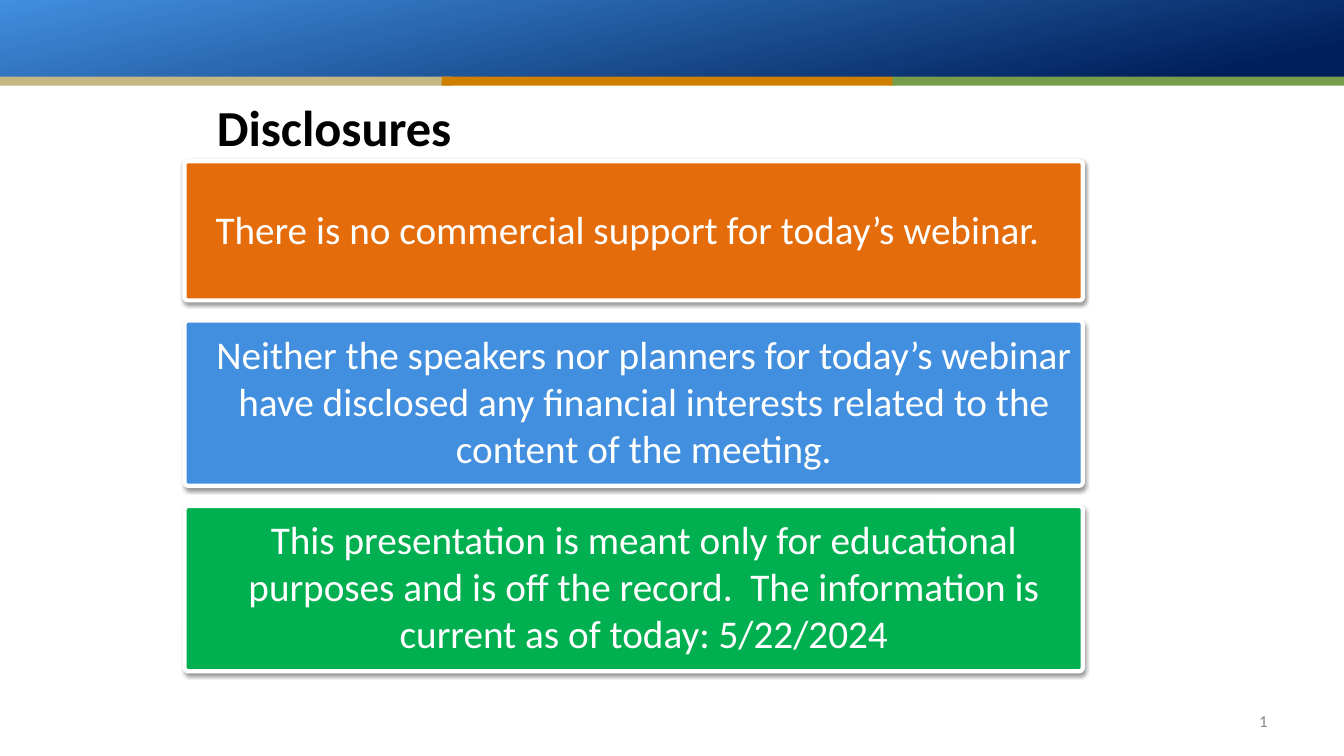
import pptx
import pptx.util
import pptx.oxml
import pptx.oxml.ns
import pptx.dml.color
import pptx.enum.shapes
import pptx.enum.text
from pptx.util import Inches

FONT = "Calibri"
COLORS = {
    "navy": "00205B", "blue": "418FDE", "sand": "C5B783", "amber": "CF7F00",
    "olive": "789D4A", "orange": "E46C0A", "green": "00B050",
    "white": "FFFFFF", "black": "000000", "gray": "898989",
}
SHAPE = pptx.enum.shapes.MSO_SHAPE
ALIGN = pptx.enum.text.PP_ALIGN
MIDDLE = pptx.enum.text.MSO_ANCHOR.MIDDLE
NS = pptx.oxml.ns.nsdecls("a")


def rgb(name):
    return pptx.dml.color.RGBColor.from_string(COLORS[name])


def style(font, size, color, bold=False):
    font.name = FONT
    font.size = pptx.util.Pt(size)
    font.bold = bold
    font.color.rgb = rgb(color)


def add_bar(slide, left, top, width, height, color=None):
    """Add a flat strip; without a colour its fill is left to the caller."""
    bar = slide.shapes.add_shape(SHAPE.RECTANGLE, Inches(left), Inches(top),
                                 Inches(width), Inches(height))
    bar.shadow.inherit = False
    bar.line.fill.background()
    if color:
        bar.fill.solid()
        bar.fill.fore_color.rgb = rgb(color)
    return bar


def add_banner(slide):
    fill = add_bar(slide, 0, 0, 13.33, 0.77).fill
    fill.gradient()
    fill.gradient_angle = 102
    for stop, place, color in zip(fill.gradient_stops, (0.09, 1), ("navy", "blue")):
        stop.position = place
        stop.color.rgb = rgb(color)
    for left, color in ((0, "sand"), (4.38, "amber"), (8.85, "olive")):
        add_bar(slide, left, 0.76, 4.48, 0.09, color)


def set_title(slide, text):
    title = slide.shapes.title
    title.left, title.top = Inches(2.05), Inches(0.91)
    title.width, title.height = Inches(9), Inches(0.69)
    frame = title.text_frame
    frame.text = text
    frame.vertical_anchor = MIDDLE
    para = frame.paragraphs[0]
    para.alignment = ALIGN.LEFT
    style(para.runs[0].font, 36, "black", True)


def add_shadow(shape):
    shape.shadow.inherit = False
    effects = shape._element.spPr.find(pptx.oxml.ns.qn("a:effectLst"))
    effects.append(pptx.oxml.parse_xml(
        f'<a:outerShdw {NS} blurRad="39400" dist="20300" dir="5400000" rotWithShape="0">'
        f'<a:srgbClr val="{COLORS["black"]}"><a:alpha val="38000"/></a:srgbClr>'
        '</a:outerShdw>'))


def add_card(slide, top, height, color, align, text):
    card = slide.shapes.add_shape(SHAPE.ROUNDED_RECTANGLE, Inches(1.83), Inches(top),
                                  Inches(8.91), Inches(height))
    card.adjustments[0] = 0.023
    card.fill.solid()
    card.fill.fore_color.rgb = rgb(color)
    card.line.color.rgb = rgb("white")
    card.line.width = pptx.util.Pt(3)
    add_shadow(card)
    frame = card.text_frame
    frame.text = text
    frame.word_wrap = True
    frame.vertical_anchor = MIDDLE
    frame.margin_left = frame.margin_right = Inches(0.1)
    frame.margin_top, frame.margin_bottom = Inches(0), Inches(0.05)
    para = frame.paragraphs[0]
    para.alignment = align
    props = para._p.get_or_add_pPr()
    props.set("marL", str(Inches(0.2)))
    props.set("indent", "0")
    style(para.runs[0].font, 28, "white")


def add_number(slide):
    """Add the slide number as a live field."""
    box = slide.shapes.add_textbox(Inches(11.89), Inches(6.95), Inches(0.78), Inches(0.4))
    frame = box.text_frame
    frame.word_wrap = True
    frame.vertical_anchor = MIDDLE
    para = frame.paragraphs[0]
    para.alignment = ALIGN.RIGHT
    para._p.append(pptx.oxml.parse_xml(
        f'<a:fld {NS} id="{{B6F15528-21DE-4FAA-801E-634DDDAF4B2B}}" type="slidenum">'
        f'<a:rPr lang="en-US" sz="1200"><a:solidFill><a:srgbClr val="{COLORS["gray"]}"/>'
        f'</a:solidFill><a:latin typeface="{FONT}"/></a:rPr><a:t>1</a:t></a:fld>'))


def main():
    deck = pptx.Presentation()
    deck.slide_width, deck.slide_height = Inches(13.33), Inches(7.5)
    slide = deck.slides.add_slide(deck.slide_layouts[5])
    add_banner(slide)
    set_title(slide, "Disclosures")
    cards = (
        (1.38, "orange", ALIGN.LEFT,
         "There is no commercial support for today’s webinar."),
        (1.64, "blue", ALIGN.CENTER,
         "Neither the speakers nor planners for today’s webinar have disclosed "
         "any financial interests related to the content of the meeting."),
        (1.64, "green", ALIGN.CENTER,
         "This presentation is meant only for educational purposes and is off "
         "the record.  The information is current as of today: 5/22/2024"),
    )
    top, gap = 1.6, 0.2
    for height, color, align, text in cards:
        add_card(slide, top, height, color, align, text)
        top += height + gap
    add_number(slide)
    deck.save("out.pptx")


if __name__ == "__main__":
    main()
